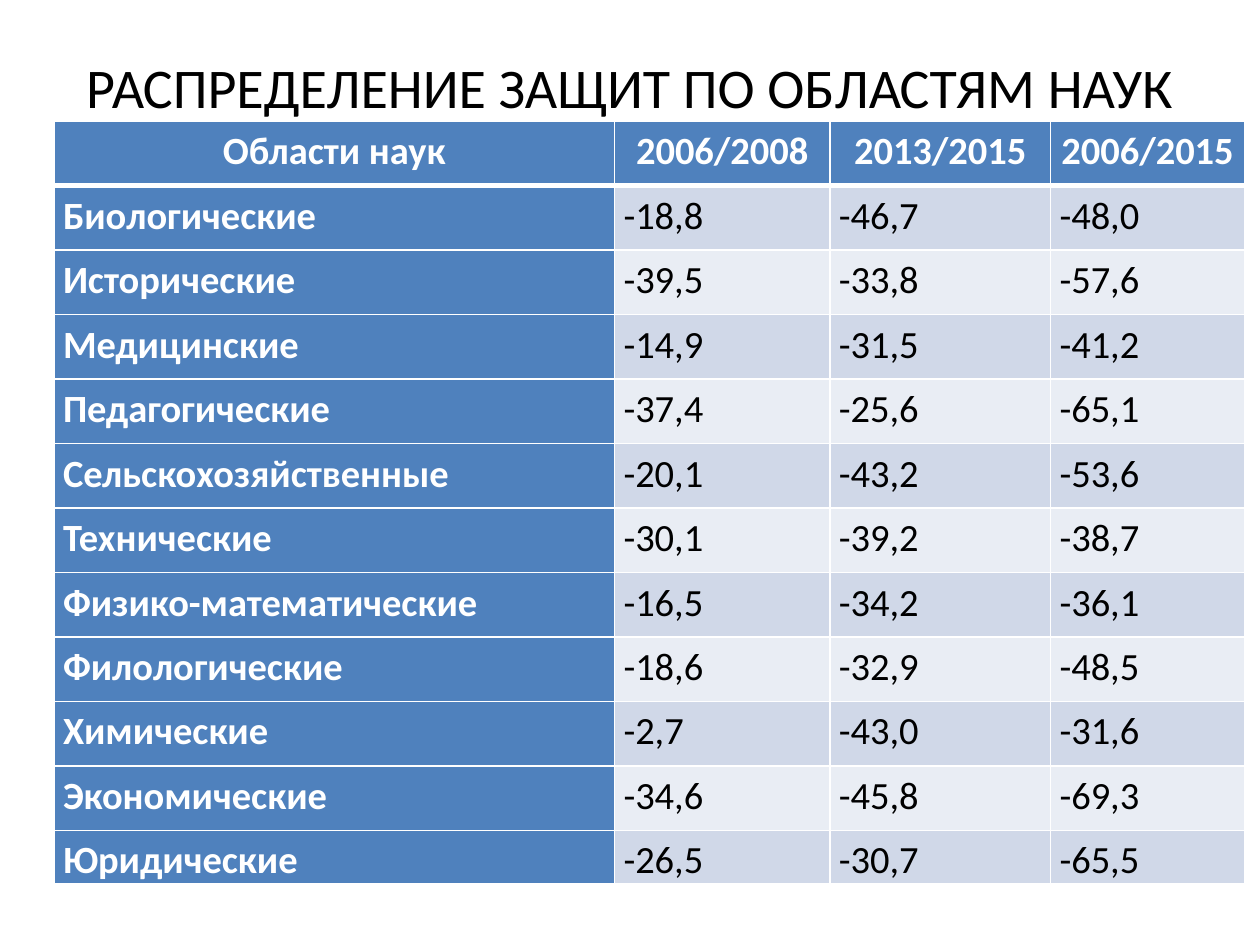
"""Build the slide with a table of thesis defences by field of science."""
from dataclasses import dataclass
from typing import Any

from lxml.etree import SubElement
from pptx import Presentation
from pptx.dml.color import RGBColor
from pptx.enum.text import MSO_ANCHOR, PP_ALIGN
from pptx.oxml.ns import qn
from pptx.util import Cm, Pt

WHITE, BLACK, BLUE = "FFFFFF", "000000", "4F81BD"
BANDS = ("D0D8E8", "E9EDF4")
COLUMN_WIDTHS = (11.3, 4.34, 4.45, 3.91)
ROW_HEIGHT, LAST_ROW_HEIGHT = 1.3, 1.02
TITLE = "РАСПРЕДЕЛЕНИЕ ЗАЩИТ ПО ОБЛАСТЯМ НАУК"
ROWS = (
    ("Области наук", "2006/2008", "2013/2015", "2006/2015"),
    ("Биологические", "-18,8", "-46,7", "-48,0"),
    ("Исторические", "-39,5", "-33,8", "-57,6"),
    ("Медицинские", "-14,9", "-31,5", "-41,2"),
    ("Педагогические", "-37,4", "-25,6", "-65,1"),
    ("Сельскохозяйственные", "-20,1", "-43,2", "-53,6"),
    ("Технические", "-30,1", "-39,2", "-38,7"),
    ("Физико-математические", "-16,5", "-34,2", "-36,1"),
    ("Филологические", "-18,6", "-32,9", "-48,5"),
    ("Химические", "-2,7", "-43,0", "-31,6"),
    ("Экономические", "-34,6", "-45,8", "-69,3"),
    ("Юридические", "-26,5", "-30,7", "-65,5"),
)
CELL_FORMAT = {
    "margin_left": Cm(0.18), "margin_right": Cm(0.18),
    "margin_top": Cm(0), "margin_bottom": Cm(0),
    "vertical_anchor": MSO_ANCHOR.TOP,
}
TABLE_FORMAT = {"first_row": True, "first_col": True, "horz_banding": False}


@dataclass(frozen=True)
class CellStyle:
    fill: str
    color: str
    bold: bool
    alignment: PP_ALIGN
    top_line: float = 1
    bottom_line: float = 1


def rgb(value: str) -> RGBColor:
    return RGBColor.from_string(value)


def apply(target: Any, values: dict[str, Any]) -> None:
    for name, value in values.items():
        setattr(target, name, value)


def write(paragraph: Any, text: str, size: int, color: str, bold: bool,
          alignment: PP_ALIGN, spacing: float) -> None:
    apply(paragraph, {"alignment": alignment, "line_spacing": spacing})
    run = paragraph.add_run()
    run.text = text
    apply(run.font, {"name": "Calibri", "size": Pt(size), "bold": bold})
    run.font.color.rgb = rgb(color)


def add_borders(cell: Any, top: float, bottom: float) -> None:
    properties = cell._tc.get_or_add_tcPr()
    for side, width in {"L": 1, "R": 1, "T": top, "B": bottom}.items():
        line = SubElement(properties, qn(f"a:ln{side}"), w=str(Pt(width)))
        fill = SubElement(line, qn("a:solidFill"))
        SubElement(fill, qn("a:srgbClr"), val=WHITE)


def style_for(row: int, column: int) -> CellStyle:
    if row == 0:
        return CellStyle(BLUE, WHITE, True, PP_ALIGN.CENTER, bottom_line=3)
    top_line = 3 if row == 1 else 1
    if column == 0:
        return CellStyle(BLUE, WHITE, True, PP_ALIGN.JUSTIFY, top_line)
    return CellStyle(BANDS[(row - 1) % 2], BLACK, False, PP_ALIGN.JUSTIFY, top_line)


def fill_cell(cell: Any, text: str, style: CellStyle) -> None:
    apply(cell, CELL_FORMAT)
    add_borders(cell, style.top_line, style.bottom_line)
    cell.fill.solid()
    cell.fill.fore_color.rgb = rgb(style.fill)
    write(cell.text_frame.paragraphs[0], text, 22, style.color, style.bold,
          style.alignment, 1.15)


def add_title(slide: Any) -> None:
    shape = slide.shapes.add_textbox(Cm(1.27), Cm(0.76), Cm(22.86), Cm(1.96))
    apply(shape.text_frame, {"word_wrap": True, "vertical_anchor": MSO_ANCHOR.MIDDLE})
    write(shape.text_frame.paragraphs[0], TITLE, 32, BLACK, False, PP_ALIGN.CENTER, 1.0)


def add_defence_table(slide: Any) -> None:
    heights = [ROW_HEIGHT] * (len(ROWS) - 1) + [LAST_ROW_HEIGHT]
    table = slide.shapes.add_table(
        len(ROWS), len(COLUMN_WIDTHS), Cm(1.09), Cm(2.44),
        Cm(sum(COLUMN_WIDTHS)), Cm(sum(heights))).table
    apply(table, TABLE_FORMAT)
    for column, width in zip(table.columns, COLUMN_WIDTHS):
        column.width = Cm(width)
    for row, height in zip(table.rows, heights):
        row.height = Cm(height)
    for row_index, texts in enumerate(ROWS):
        for column_index, text in enumerate(texts):
            fill_cell(table.cell(row_index, column_index), text,
                      style_for(row_index, column_index))


def main() -> None:
    presentation = Presentation()
    apply(presentation, {"slide_width": Cm(25.4), "slide_height": Cm(19.05)})
    slide = presentation.slides.add_slide(presentation.slide_layouts[6])
    add_title(slide)
    add_defence_table(slide)
    presentation.save("out.pptx")


if __name__ == "__main__":
    main()
